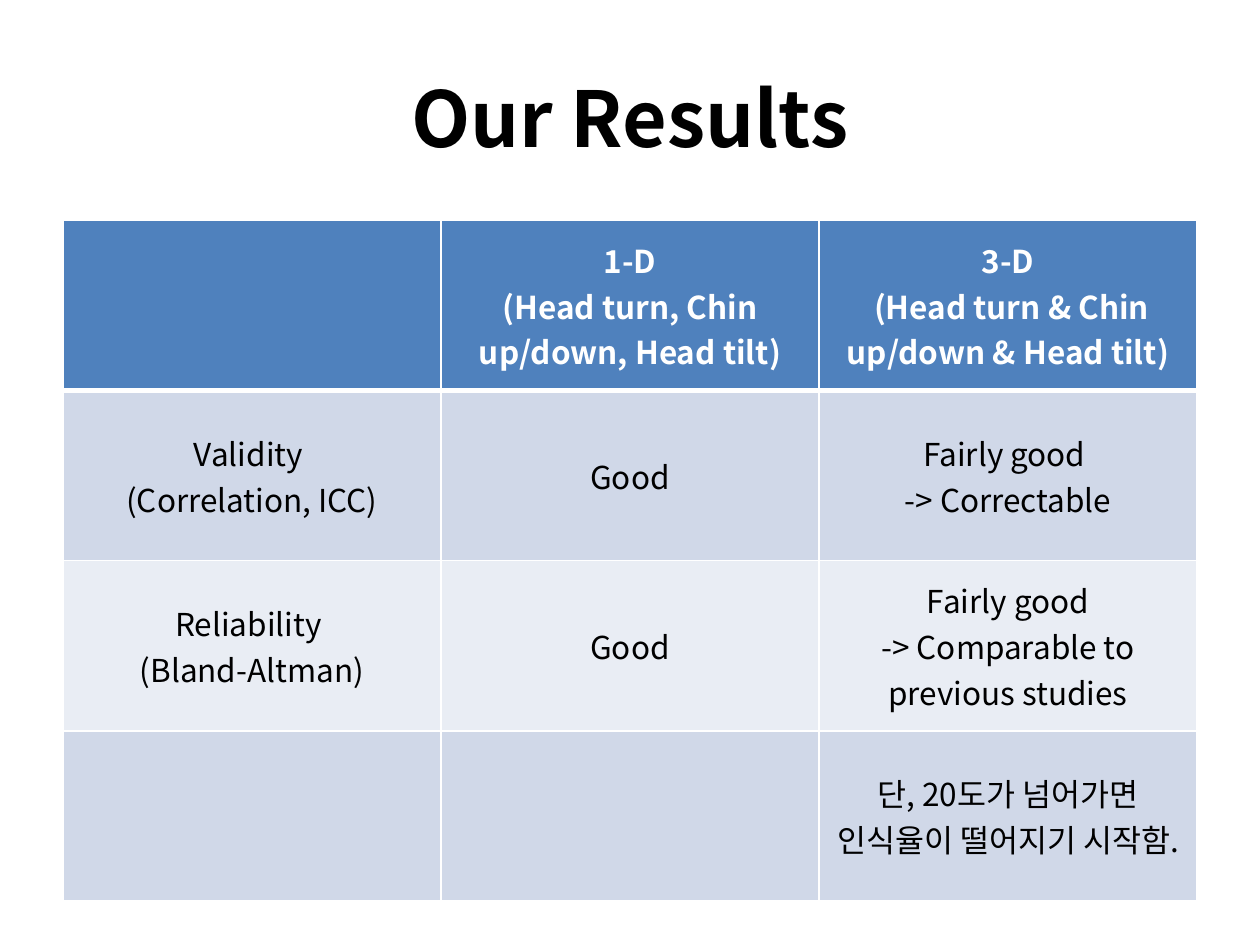
from lxml import etree
from pptx import Presentation
from pptx.dml.color import RGBColor
from pptx.enum.text import MSO_ANCHOR, PP_ALIGN
from pptx.oxml.ns import qn
from pptx.util import Inches, Pt

CENTER = PP_ALIGN.CENTER
MIDDLE = MSO_ANCHOR.MIDDLE

THEME = {
    "font": "Noto Sans CJK KR",
    "title_size": 44,
    "body_size": 18,
    "text": "000000",
    "header_text": "FFFFFF",
    "header_fill": "4F81BD",
    "bands": ("D0D8E8", "E9EDF4"),
    "border": "FFFFFF",
    "border_width": 1,
    "header_rule_width": 3,
}

TITLE = "Our Results"
ROWS = [
    [
        [],
        ["1-D", "(Head turn, Chin up/down, Head tilt)"],
        ["3-D", " (Head turn & Chin up/down & Head tilt)"],
    ],
    [
        ["Validity ", "(Correlation, ICC)"],
        ["Good"],
        ["Fairly good ", "-> Correctable"],
    ],
    [
        ["Reliability ", "(Bland-Altman)"],
        ["Good"],
        ["Fairly good", "-> Comparable to previous studies"],
    ],
    [[], [], ["단, 20도가 넘어가면 인식율이 떨어지기 시작함."]],
]

LEFT, WIDTH = 0.5, 9
TITLE_TOP, TITLE_HEIGHT = 0.3, 1.25
TABLE_TOP, TABLE_HEIGHT = 1.75, 5.4


def write_lines(text_frame, lines, size, color, bold):
    for index, line in enumerate(lines):
        paragraph = text_frame.paragraphs[0] if index == 0 else text_frame.add_paragraph()
        paragraph.text = line
        paragraph.alignment = CENTER
        font = paragraph.font
        font.name = THEME["font"]
        font.size = Pt(size)
        font.bold = bold
        font.color.rgb = RGBColor.from_string(color)
        properties = paragraph._p.get_or_add_pPr().find(qn("a:defRPr"))
        etree.SubElement(properties, qn("a:ea"), typeface=THEME["font"])


def set_borders(cell, row_index):
    widths = dict.fromkeys(("lnL", "lnR", "lnT", "lnB"), THEME["border_width"])
    if row_index == 0:
        widths["lnB"] = THEME["header_rule_width"]
    elif row_index == 1:
        widths["lnT"] = THEME["header_rule_width"]
    properties = cell._tc.get_or_add_tcPr()
    for side, width in widths.items():
        line = etree.SubElement(properties, qn(f"a:{side}"), w=str(Pt(width)))
        fill = etree.SubElement(line, qn("a:solidFill"))
        etree.SubElement(fill, qn("a:srgbClr"), val=THEME["border"])


def add_title(slide):
    box = slide.shapes.add_textbox(
        Inches(LEFT), Inches(TITLE_TOP), Inches(WIDTH), Inches(TITLE_HEIGHT)
    )
    box.text_frame.word_wrap = True
    box.text_frame.vertical_anchor = MIDDLE
    write_lines(box.text_frame, [TITLE], THEME["title_size"], THEME["text"], True)


def add_results_table(slide):
    table = slide.shapes.add_table(
        len(ROWS), len(ROWS[0]),
        Inches(LEFT), Inches(TABLE_TOP), Inches(WIDTH), Inches(TABLE_HEIGHT),
    ).table
    table.horz_banding = False
    for row_index, row in enumerate(ROWS):
        is_header = row_index == 0
        fill = THEME["header_fill"] if is_header else THEME["bands"][(row_index - 1) % 2]
        color = THEME["header_text"] if is_header else THEME["text"]
        for column_index, lines in enumerate(row):
            cell = table.cell(row_index, column_index)
            cell.vertical_anchor = MIDDLE
            set_borders(cell, row_index)
            cell.fill.solid()
            cell.fill.fore_color.rgb = RGBColor.from_string(fill)
            write_lines(cell.text_frame, lines, THEME["body_size"], color, is_header)


def main():
    presentation = Presentation()
    presentation.slide_width = Inches(10)
    presentation.slide_height = Inches(7.5)
    slide = presentation.slides.add_slide(presentation.slide_layouts[6])
    add_title(slide)
    add_results_table(slide)
    presentation.save("out.pptx")


if __name__ == "__main__":
    main()
